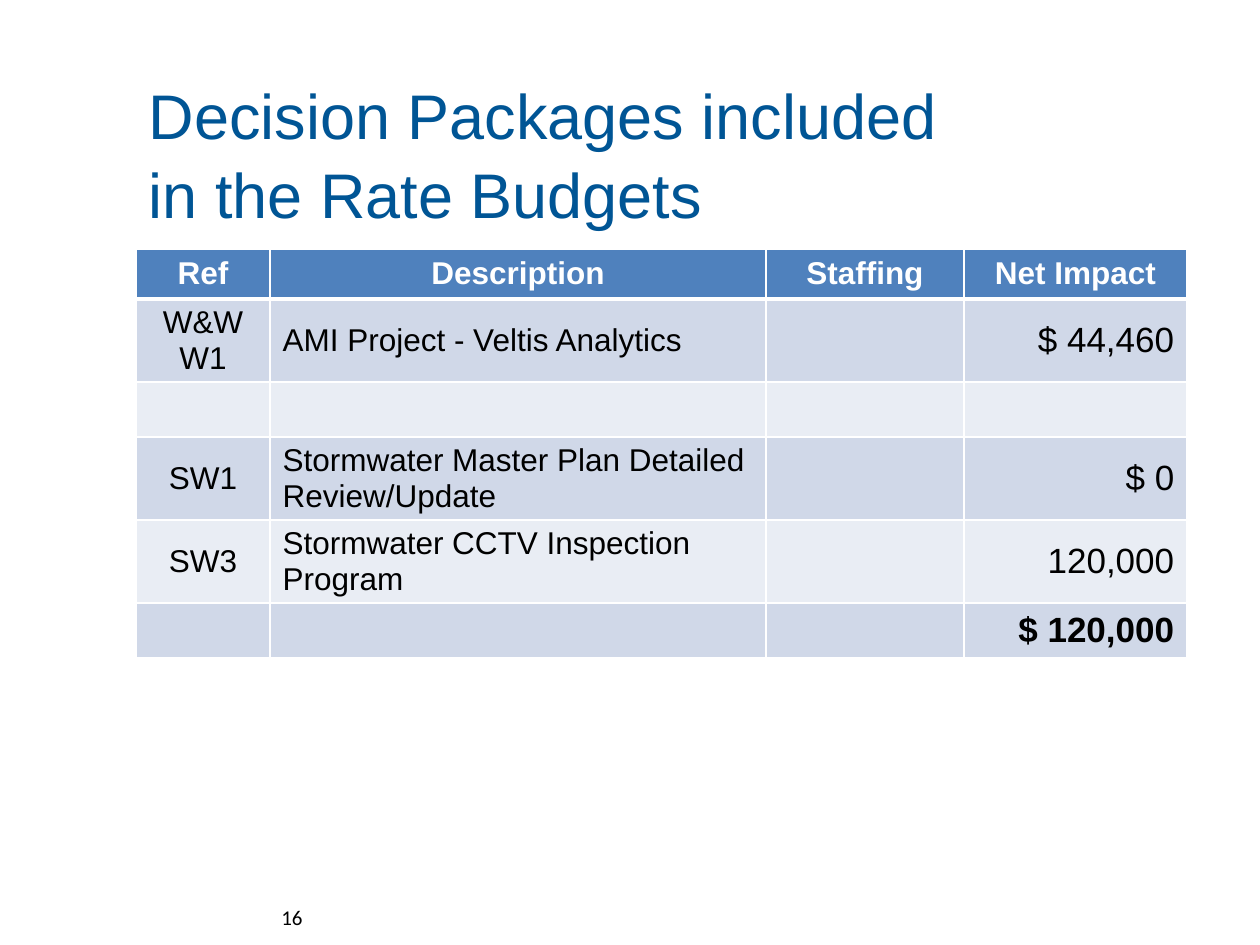
from typing import NamedTuple

from lxml import etree
from pptx import Presentation
from pptx.dml.color import RGBColor
from pptx.enum.text import MSO_ANCHOR, MSO_AUTO_SIZE, PP_ALIGN
from pptx.oxml.ns import qn
from pptx.util import Emu, Pt

MIDDLE = MSO_ANCHOR.MIDDLE
LEFT, CENTER, RIGHT = PP_ALIGN.LEFT, PP_ALIGN.CENTER, PP_ALIGN.RIGHT
PX_PER_INCH = 126
COLORS = {
    "title": "005595",
    "header": "4F81BD",
    "band_dark": "D0D8E8",
    "band_light": "E9EDF4",
    "white": "FFFFFF",
    "black": "000000",
}


class Column(NamedTuple):
    heading: str
    width: int
    align: PP_ALIGN
    size: int


class Row(NamedTuple):
    height: int
    texts: tuple[str, str, str, str]
    total: bool = False


COLUMNS = [
    Column("Ref", 134, CENTER, 18),
    Column("Description", 496, LEFT, 18),
    Column("Staffing", 198, LEFT, 18),
    Column("Net Impact", 223, RIGHT, 20),
]
ROWS = [
    Row(83, ("W&WW1", "AMI Project - Veltis Analytics", "", "$ 44,460")),
    Row(55, ("", "", "", "")),
    Row(83, ("SW1", "Stormwater Master Plan Detailed Review/Update", "", "$ 0")),
    Row(83, ("SW3", "Stormwater CCTV Inspection Program", "", "120,000")),
    Row(55, ("", "", "", "$ 120,000"), total=True),
]
HEADER_HEIGHT = 50


def px(n: int) -> Emu:
    return Emu(round(n * 914400 / PX_PER_INCH))


def write(tf, text: str, *, size: int, color: str = "black", font: str = "Arial",
          align: PP_ALIGN = LEFT, bold: bool = False, spacing: float = 1.0) -> None:
    tf.word_wrap = True
    p = tf.paragraphs[0]
    p.text = text
    p.alignment = align
    p.line_spacing = spacing
    # The paragraph font also sizes the empty cells
    for f in [p.font] + [r.font for r in p.runs]:
        f.name, f.size, f.bold = font, Pt(size), bold
        f.color.rgb = RGBColor.from_string(COLORS[color])


def set_borders(cell, top: int = 1, bottom: int = 1) -> None:
    tcPr = cell._tc.get_or_add_tcPr()
    for side, width in (("L", 1), ("R", 1), ("T", top), ("B", bottom)):
        ln = etree.SubElement(tcPr, qn(f"a:ln{side}"), w=str(Pt(width)))
        fill = etree.SubElement(ln, qn("a:solidFill"))
        etree.SubElement(fill, qn("a:srgbClr"), val=COLORS["white"])


def fill_cell(cell, text: str, fill: str, *, top: int = 1, bottom: int = 1, **fmt) -> None:
    set_borders(cell, top, bottom)
    cell.fill.solid()
    cell.fill.fore_color.rgb = RGBColor.from_string(COLORS[fill])
    cell.vertical_anchor = MIDDLE
    cell.margin_top = cell.margin_bottom = px(5)
    write(cell.text_frame, text, **fmt)


def add_budget_table(s, left: int, top: int) -> None:
    width = sum(c.width for c in COLUMNS)
    height = HEADER_HEIGHT + sum(r.height for r in ROWS)
    table = s.shapes.add_table(len(ROWS) + 1, len(COLUMNS),
                               px(left), px(top), px(width), px(height)).table
    table.rows[0].height = px(HEADER_HEIGHT)
    for j, col in enumerate(COLUMNS):
        table.columns[j].width = px(col.width)
        fill_cell(table.cell(0, j), col.heading, "header", bottom=3,
                  size=18, color="white", align=CENTER, bold=True)
    for i, row in enumerate(ROWS, start=1):
        table.rows[i].height = px(row.height)
        band = "band_dark" if i % 2 else "band_light"
        for j, (col, text) in enumerate(zip(COLUMNS, row.texts)):
            fill_cell(table.cell(i, j), text, band, top=3 if i == 1 else 1,
                      size=col.size, align=col.align, bold=row.total)


def main() -> None:
    prs = Presentation()
    prs.slide_width, prs.slide_height = px(1260), px(945)
    s = prs.slides.add_slide(prs.slide_layouts[5])

    # Title
    title = s.shapes.title
    title.left, title.top, title.width, title.height = px(136), px(73), px(1134), px(158)
    tf = title.text_frame
    tf.auto_size = MSO_AUTO_SIZE.NONE
    tf.vertical_anchor = MIDDLE
    write(tf, "Decision Packages included\vin the Rate Budgets",
          size=36, color="title", spacing=1.05)

    # Decision packages
    add_budget_table(s, 136, 249)

    # Page number
    tf = s.shapes.add_textbox(px(136), px(892), px(179), px(50)).text_frame
    tf.vertical_anchor = MIDDLE
    write(tf, "16", size=12, font="Calibri", align=RIGHT)

    prs.save("out.pptx")


if __name__ == "__main__":
    main()
